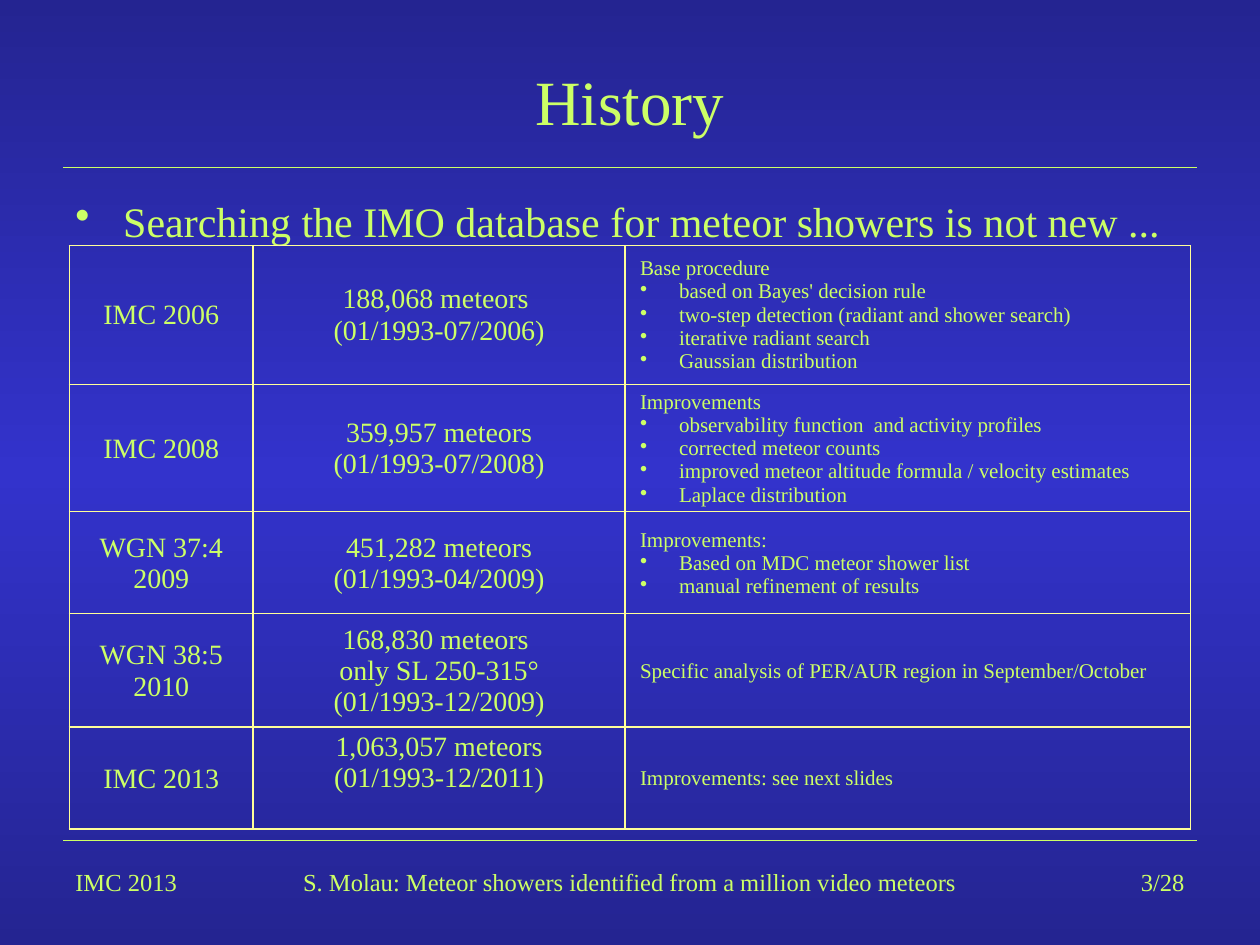
from dataclasses import dataclass

from pptx import Presentation
from pptx.dml.color import RGBColor
from pptx.enum.shapes import MSO_CONNECTOR
from pptx.enum.text import MSO_ANCHOR, PP_ALIGN
from pptx.oxml import parse_xml
from pptx.oxml.ns import nsdecls
from pptx.oxml.xmlchemy import OxmlElement
from pptx.util import Inches, Pt

LEFT, CENTER, RIGHT = PP_ALIGN.LEFT, PP_ALIGN.CENTER, PP_ALIGN.RIGHT
TOP, MIDDLE = MSO_ANCHOR.TOP, MSO_ANCHOR.MIDDLE
LINE = MSO_CONNECTOR.STRAIGHT
FONT = "Times New Roman"
COLORS = {"text": "CCFF66", "grid": "FFFF99", "back": "3333CC"}


@dataclass
class Label:
    text: str
    left: float
    top: float
    width: float
    height: float
    size: float
    align: int = LEFT
    anchor: int = TOP
    bullet: bool = False


@dataclass
class Study:
    source: str
    meteors: str
    notes: str
    height: float
    pad: tuple = (0.01, 0)
    lift: float = 0


LABELS = [
    Label("IMC 2013", 0.5, 6.83, 1.67, 0.5, 14),
    Label("S. Molau: Meteor showers identified from a million video meteors",
          2.25, 6.83, 5.5, 0.5, 14, CENTER),
    Label("3/28", 7.83, 6.83, 1.67, 0.5, 14, RIGHT),
    Label("History", 0.5, 0.42, 9, 0.75, 36, CENTER, MIDDLE),
    Label("Searching the IMO database for meteor showers is not new ...",
          0.5, 1.5, 9.34, 0.68, 24, bullet=True),
]

STUDIES = [
    Study("IMC 2006", "188,068 meteors \n(01/1993-07/2006)",
          "Base procedure\nbased on Bayes' decision rule\n"
          "two-step detection (radiant and shower search)\n"
          "iterative radiant search\nGaussian distribution", 1.1, (0.05, 0.05)),
    Study("IMC 2008", "359,957 meteors\v(01/1993-07/2008)",
          "Improvements\nobservability function  and activity profiles\n"
          "corrected meteor counts\n"
          "improved meteor altitude formula / velocity estimates\n"
          "Laplace distribution", 1.01),
    Study("WGN 37:4\n2009", "451,282 meteors\v(01/1993-04/2009)",
          "Improvements:\nBased on MDC meteor shower list\n"
          "manual refinement of results", 0.81),
    Study("WGN 38:5\n2010",
          "168,830 meteors \nonly SL 250-315°\v(01/1993-12/2009)",
          "Specific analysis of PER/AUR region in September/October", 0.9),
    Study("IMC 2013", "1,063,057 meteors\v(01/1993-12/2011)",
          "Improvements: see next slides", 0.81, lift=0.25),
]
WIDTHS = [1.46, 2.95, 4.49]


def style(para, size: float, align: int) -> None:
    para.alignment = align
    for run in para.runs:
        run.font.size = Pt(size)
        run.font.name = FONT
        run.font.color.rgb = RGBColor.from_string(COLORS["text"])


def dot(para, indent: float) -> None:
    props = para._p.get_or_add_pPr()
    props.set("marL", str(Inches(indent)))
    props.set("indent", str(-Inches(indent)))
    mark = OxmlElement("a:buChar")
    mark.set("char", "•")
    props.append(mark)


def paint(slide) -> None:
    slide.background.fill.solid()
    old = slide.background.fill._xPr.find(
        "{http://schemas.openxmlformats.org/drawingml/2006/main}solidFill")
    shade = '<a:shade val="46275"/>'
    stops = "".join(
        f'<a:gs pos="{pos}"><a:srgbClr val="{COLORS["back"]}">{mod}</a:srgbClr></a:gs>'
        for pos, mod in ((0, shade), (50000, ""), (100000, shade)))
    grad = parse_xml(f'<a:gradFill {nsdecls("a")} rotWithShape="0"><a:gsLst>{stops}'
                     '</a:gsLst><a:lin ang="5400000" scaled="1"/></a:gradFill>')
    old.getparent().replace(old, grad)


def rule(slide, top: float) -> None:
    line = slide.shapes.add_connector(
        LINE, Inches(0.5), Inches(top), Inches(9.5), Inches(top))
    line.line.color.rgb = RGBColor.from_string(COLORS["text"])
    line.line.width = Pt(0.75)
    line._element.spPr.append(OxmlElement("a:effectLst"))


def write(slide, label: Label) -> None:
    box = slide.shapes.add_textbox(
        Inches(label.left), Inches(label.top),
        Inches(label.width), Inches(label.height))
    frame = box.text_frame
    frame.word_wrap = True
    frame.vertical_anchor = label.anchor
    frame.text = label.text
    para = frame.paragraphs[0]
    style(para, label.size, label.align)
    if label.bullet:
        para.space_before = Pt(4)
        dot(para, 0.38)


def edge(cell) -> None:
    props = cell._tc.get_or_add_tcPr()
    for spot, side in enumerate(("lnL", "lnR", "lnT", "lnB")):
        props.insert(spot, parse_xml(
            f'<a:{side} {nsdecls("a")} w="{Pt(1)}"><a:solidFill>'
            f'<a:srgbClr val="{COLORS["grid"]}"/></a:solidFill></a:{side}>'))


def fill(cell, text: str, pad: tuple, notes: bool) -> None:
    cell.fill.background()
    edge(cell)
    cell.vertical_anchor = MIDDLE
    cell.margin_left = cell.margin_right = Inches(0.12)
    cell.margin_top, cell.margin_bottom = map(Inches, pad)
    cell.text_frame.text = text
    for spot, para in enumerate(cell.text_frame.paragraphs):
        style(para, 12 if notes else 16, LEFT if notes else CENTER)
        if notes and spot:
            dot(para, 0.31)


def chart(slide) -> None:
    table = slide.shapes.add_table(
        len(STUDIES), len(WIDTHS), Inches(0.55), Inches(1.95),
        Inches(sum(WIDTHS)), Inches(sum(s.height for s in STUDIES))).table
    table.first_row = table.horz_banding = False
    for col, width in zip(table.columns, WIDTHS):
        col.width = Inches(width)
    for row, study in zip(table.rows, STUDIES):
        row.height = Inches(study.height)
        top, base = study.pad
        fill(row.cells[0], study.source, study.pad, False)
        fill(row.cells[1], study.meteors, (top, base + study.lift), False)
        fill(row.cells[2], study.notes, study.pad, True)


def main() -> None:
    deck = Presentation()
    deck.slide_width, deck.slide_height = Inches(10), Inches(7.5)
    slide = deck.slides.add_slide(deck.slide_layouts[6])
    paint(slide)
    for top in (1.33, 6.67):
        rule(slide, top)
    for label in LABELS:
        write(slide, label)
    chart(slide)
    deck.save("out.pptx")


if __name__ == "__main__":
    main()
